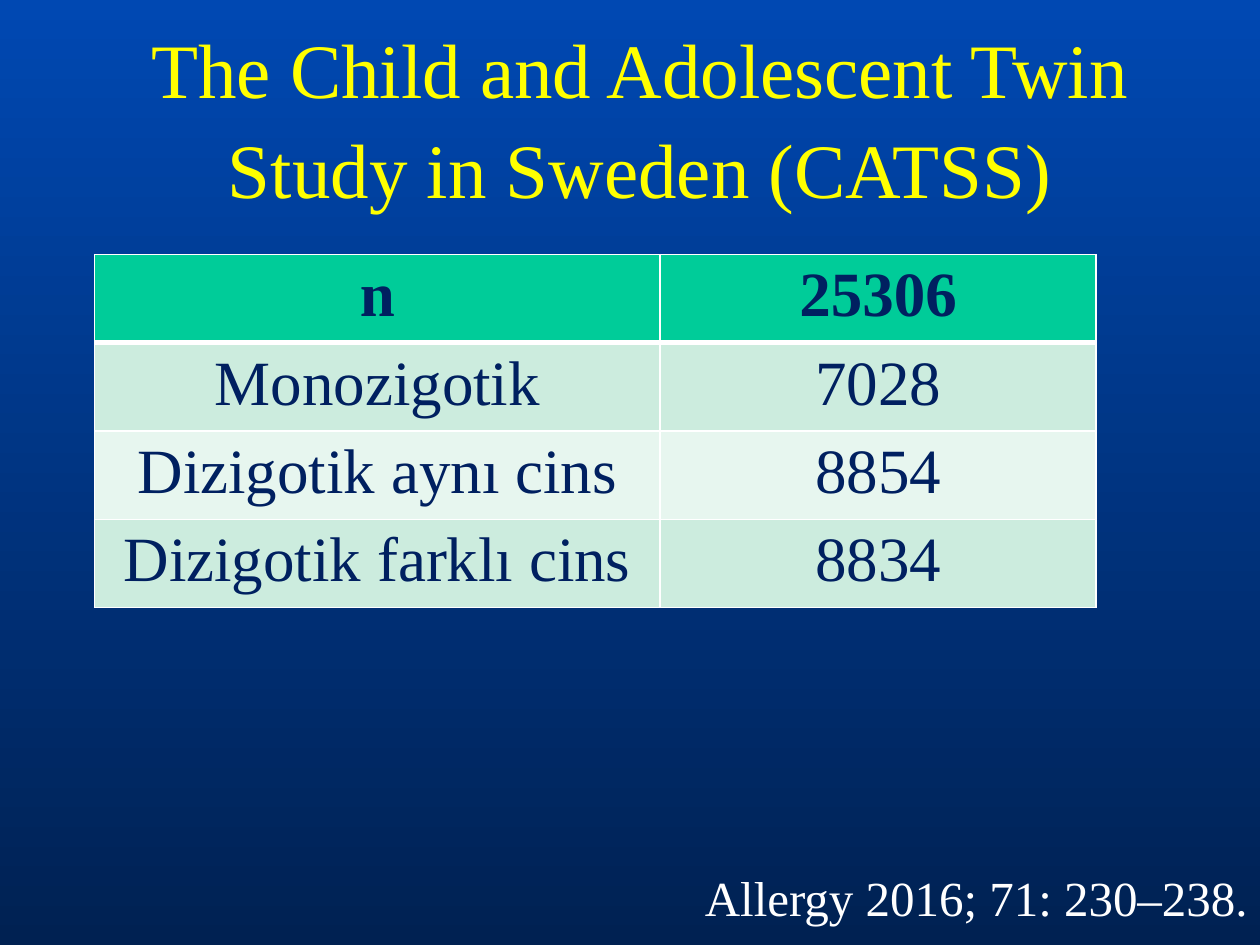
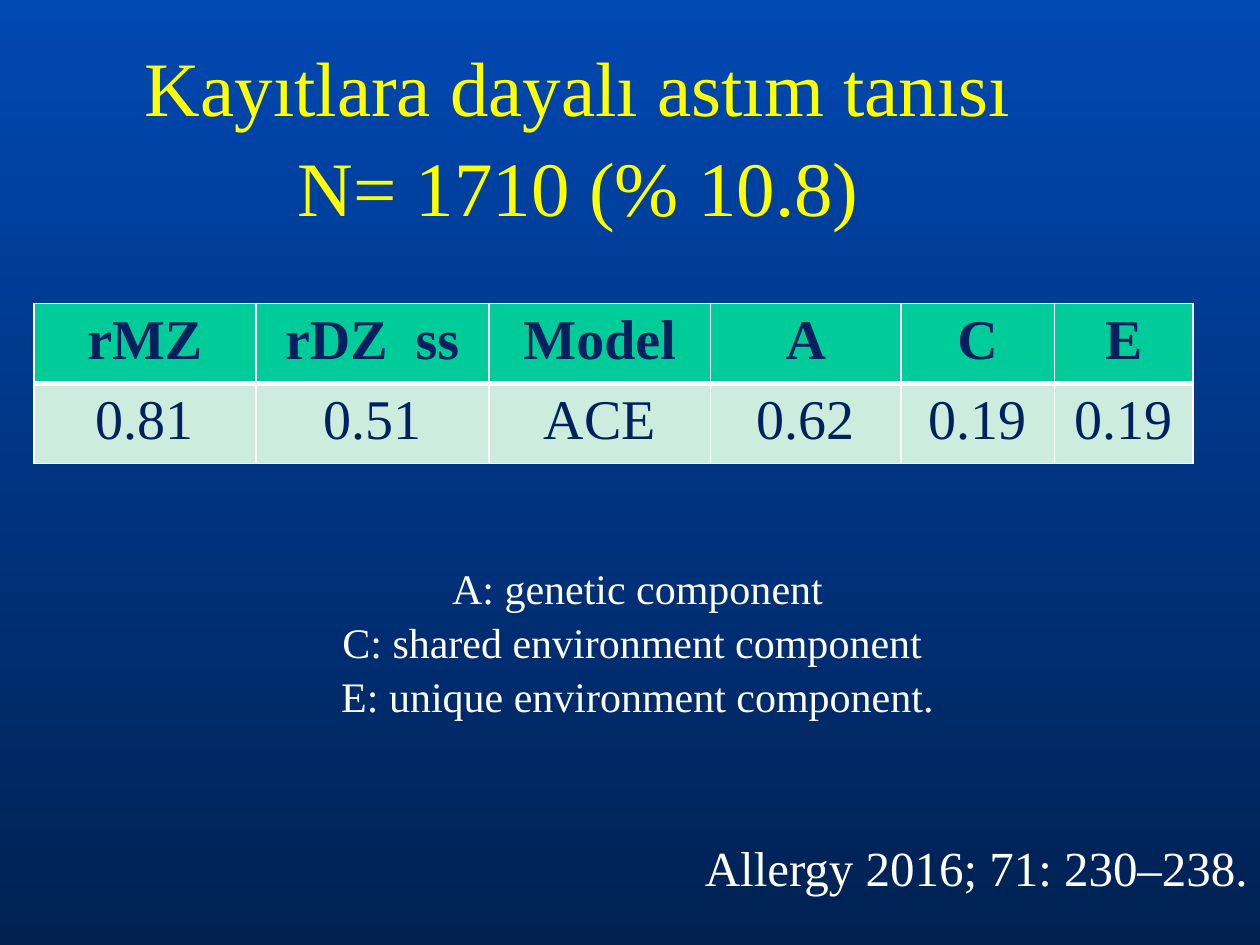
from lxml import etree
from pptx import Presentation
from pptx.dml.color import RGBColor
from pptx.enum import text
from pptx.oxml import ns
from pptx.util import Inches, Pt

FONT = "Times New Roman"
COLORS = {
    "sky": "0048B2", "night": "002152", "title": "FFFF00", "body": "FFFFFF",
    "cell_text": "002060", "header": "00CC99", "odd": "CCECDE", "even": "E7F6EF",
    "border": "FFFFFF",
}
CITATION = "Allergy 2016; 71: 230–238."

SLIDES = [
    {
        "title": ["The Child and Adolescent Twin Study in Sweden (CATSS)"],
        "title_at": (0.83, 0.28, 8.5, 1.25),
        "title_anchor": text.MSO_ANCHOR.MIDDLE,
        "rows": [("n", "25306"), ("Monozigotik", "7028"),
                 ("Dizigotik aynı cins", "8854"), ("Dizigotik farklı cins", "8834")],
        "table_at": (0.75, 2.02), "columns": (4.49, 3.46),
        "row_height": 0.65, "table_size": 36,
        "legend": [],
        "citation_top": 6.8,
    },
    {
        "title": ["Kayıtlara dayalı astım tanısı", "N= 1710 (% 10.8)"],
        "title_at": (1.02, 0.21, 7.14, 1.6),
        "title_anchor": text.MSO_ANCHOR.TOP,
        "rows": [("rMZ", "rDZ  ss", "Model", "A", "C", "E"),
                 ("0.81", "0.51", "ACE", "0.62", "0.19", "0.19")],
        "table_at": (0.27, 2.41), "columns": (1.76, 1.85, 1.76, 1.51, 1.22, 1.1),
        "row_height": 0.59, "table_size": 32,
        "legend": ["A: genetic component", "C: shared environment component ",
                   "E: unique environment component."],
        "citation_top": 6.56,
    },
]


def color(name):
    return RGBColor.from_string(COLORS[name])


def write(frame, lines, size, ink, align=text.PP_ALIGN.CENTER, bold=False, spacing=None):
    for index, line in enumerate(lines):
        para = frame.paragraphs[0] if index == 0 else frame.add_paragraph()
        para.alignment = align
        para.line_spacing = spacing
        span = para.add_run()
        span.text = line
        span.font.name = FONT
        span.font.size = Pt(size)
        span.font.bold = bold
        span.font.color.rgb = color(ink)


def add_text(page, lines, at, size, ink="body", align=text.PP_ALIGN.CENTER,
             anchor=text.MSO_ANCHOR.TOP):
    box = page.shapes.add_textbox(*map(Inches, at))
    box.text_frame.word_wrap = True
    box.text_frame.vertical_anchor = anchor
    write(box.text_frame, lines, size, ink, align, spacing=1.08)


def set_borders(cell, widths):
    """Draw the cell's sides; widths maps lnL, lnR, lnT, lnB to points."""
    properties = cell._tc.get_or_add_tcPr()
    for index, (side, width) in enumerate(widths.items()):
        line = etree.Element(ns.qn(f"a:{side}"), w=str(Pt(width)))
        fill = etree.SubElement(line, ns.qn("a:solidFill"))
        etree.SubElement(fill, ns.qn("a:srgbClr"), val=COLORS["border"])
        properties.insert(index, line)


def add_data_table(page, rows, at, columns, row_height, size):
    frame = page.shapes.add_table(
        len(rows), len(columns), *map(Inches, at),
        Inches(sum(columns)), Inches(row_height * len(rows)))
    table = frame.table
    for column, width in zip(table.columns, columns):
        column.width = Inches(width)
    for row_index, values in enumerate(rows):
        table.rows[row_index].height = Inches(row_height)
        is_header = row_index == 0
        band = "header" if is_header else "odd" if row_index % 2 else "even"
        for column_index, value in enumerate(values):
            cell = table.cell(row_index, column_index)
            cell.fill.solid()
            cell.fill.fore_color.rgb = color(band)
            write(cell.text_frame, [value], size, "cell_text", bold=is_header)
            set_borders(cell, {"lnL": 1, "lnR": 1, "lnT": 3 if row_index == 1 else 1,
                               "lnB": 3 if is_header else 1})


def set_background(master):
    fill = master.background.fill
    fill.gradient()
    fill.gradient_angle = 270
    for stop, name in zip(fill.gradient_stops, ("sky", "night")):
        stop.color.rgb = color(name)


def main():
    deck = Presentation()
    deck.slide_width, deck.slide_height = Inches(10), Inches(7.5)
    set_background(deck.slide_master)
    for content in SLIDES:
        page = deck.slides.add_slide(deck.slide_layouts[6])
        add_text(page, content["title"], content["title_at"], 44, ink="title",
                 anchor=content["title_anchor"])
        add_data_table(page, content["rows"], content["table_at"], content["columns"],
                       content["row_height"], content["table_size"])
        if content["legend"]:
            add_text(page, content["legend"], (2.56, 4.38, 5, 1.31), 24)
        add_text(page, [CITATION], (2.09, content["citation_top"], 7.91, 0.57), 28,
                 align=text.PP_ALIGN.RIGHT)
    deck.save("out.pptx")


if __name__ == "__main__":
    main()
